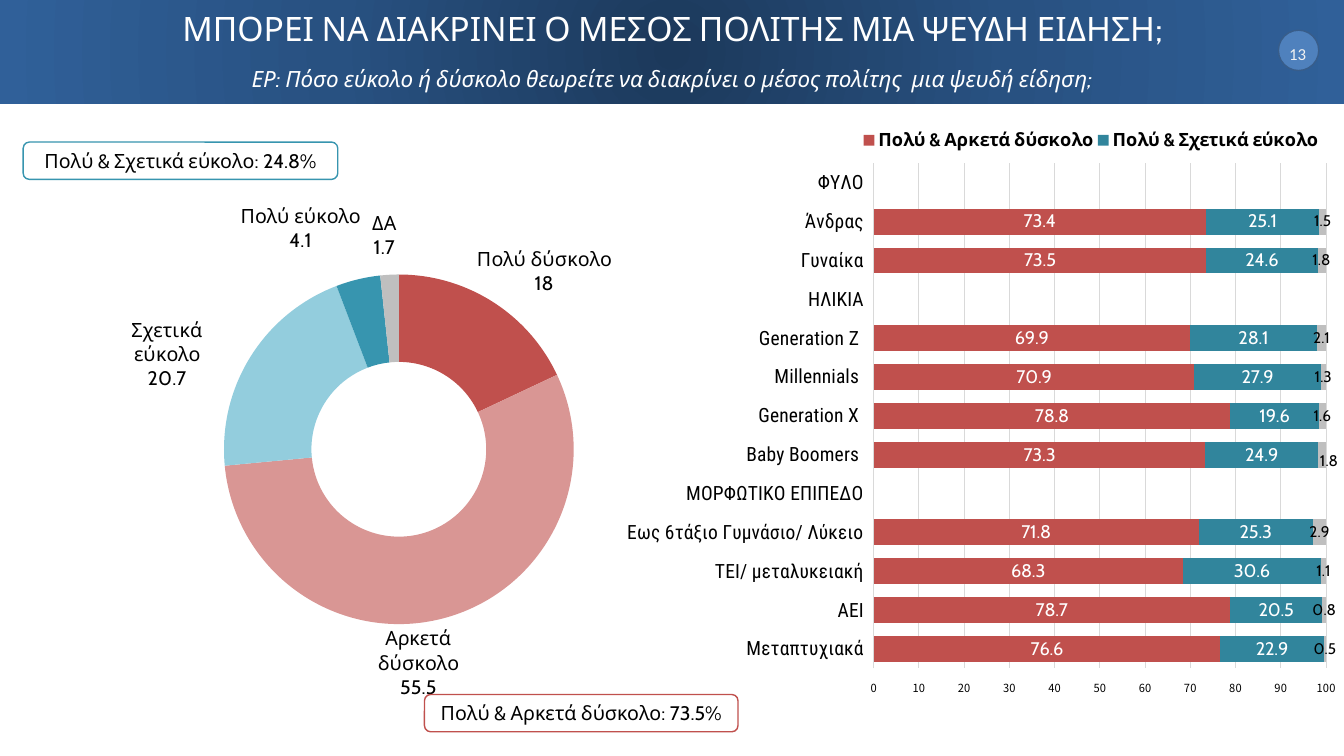
from lxml.etree import SubElement
from pptx import Presentation
from pptx.chart.data import CategoryChartData
from pptx.dml.color import RGBColor
from pptx.enum.chart import (XL_CHART_TYPE, XL_LABEL_POSITION, XL_LEGEND_POSITION,
                             XL_TICK_LABEL_POSITION, XL_TICK_MARK)
from pptx.enum.shapes import MSO_SHAPE
from pptx.enum.text import MSO_ANCHOR, PP_ALIGN
from pptx.oxml import parse_xml
from pptx.oxml.ns import nsdecls, qn
from pptx.util import Inches, Pt

COLORS = {
    "black": "000000", "white": "FFFFFF", "number": "F2F2F2", "grid": "D9D9D9",
    "navy": "1C395B", "blue": "285181", "light blue": "306099",
    "badge": "4F81BD", "badge line": "385D8A",
    "red": "C0504D", "pale red": "D99694", "teal": "3795AF",
    "pale teal": "93CDDD", "deep teal": "31859C", "gray": "BFBFBF",
}

# answer, share, colour, label shift as a fraction of the chart's size
ANSWERS = [
    ("Πολύ δύσκολο", 18, "red", (0.1, -0.13)),
    ("Αρκετά δύσκολο", 55.5, "pale red", (-0.02, 0.17)),
    ("Σχετικά εύκολο", 20.7, "pale teal", (-0.16, -0.05)),
    ("Πολύ εύκολο", 4.1, "teal", (-0.09, -0.18)),
    ("ΔΑ", 1.7, "gray", (-0.01, -0.16)),
]

GROUPS = [
    ("ΦΥΛΟ", None, None, None),
    ("Άνδρας", 73.4, 25.1, 1.5),
    ("Γυναίκα", 73.5, 24.6, 1.8),
    ("ΗΛΙΚΙΑ", None, None, None),
    ("Generation Z ", 69.9, 28.1, 2.1),
    ("Millennials ", 70.9, 27.9, 1.3),
    ("Generation X ", 78.8, 19.6, 1.6),
    ("Baby Boomers ", 73.3, 24.9, 1.8),
    ("ΜΟΡΦΩΤΙΚΟ ΕΠΙΠΕΔΟ", None, None, None),
    ("Εως 6τάξιο Γυμνάσιο/ Λύκειο", 71.8, 25.3, 2.9),
    ("ΤΕΙ/ μεταλυκειακή", 68.3, 30.6, 1.1),
    ("ΑΕΙ", 78.7, 20.5, 0.8),
    ("Μεταπτυχιακά", 76.6, 22.9, 0.5),
]

# name, bar colour, label colour, label size
OPINIONS = [
    ("Πολύ & Αρκετά δύσκολο", "red", "white", 13),
    ("Πολύ & Σχετικά εύκολο", "deep teal", "white", 13),
    ("ΔΑ", "gray", "black", 11),
]


def rgb(color):
    return RGBColor.from_string(COLORS[color])


def style_font(font, size, color="black", name="Cabin", **traits):
    font.size, font.name = Pt(size), name
    font.color.rgb = rgb(color)
    for trait, value in traits.items():
        setattr(font, trait, value)


def manual_layout(x, y, w=None, h=None, inner=False):
    """Return a c:layout; without w and h, x and y are shifts from the default place."""
    layout = parse_xml(f"<c:layout {nsdecls('c')}><c:manualLayout/></c:layout>")
    parts = [("layoutTarget", "inner")] if inner else []
    if w is not None:
        parts += [("xMode", "edge"), ("yMode", "edge")]
    parts += [("x", x), ("y", y), ("w", w), ("h", h)]
    for tag, value in parts:
        if value is not None:
            SubElement(layout[0], qn(f"c:{tag}")).set("val", str(value))
    return layout


def place_plot(chart, *box):
    area = chart._chartSpace.xpath(".//c:plotArea")[0]
    for old in area.findall(qn("c:layout")):
        area.remove(old)
    area.insert(0, manual_layout(*box, inner=True))


def shift_label(series, index, shift, size):
    """Move one point's label and return its c:dLbl."""
    style_font(series.points[index].data_label.font, size)
    label = series._element.xpath(f'.//c:dLbl[c:idx/@val="{index}"]')[0]
    label.find(qn("c:idx")).addnext(manual_layout(*shift))
    return label


class SurveySlide:
    """Holds the slide and its shared style."""

    def __init__(self, presentation):
        self.slide = presentation.slides.add_slide(presentation.slide_layouts[5])
        self.shapes = self.slide.shapes

    def shape(self, kind, box, fill=None, line=None):
        shape = self.shapes.add_shape(kind, *map(Inches, box))
        shape.shadow.inherit = False
        if fill:
            shape.fill.solid()
            shape.fill.fore_color.rgb = rgb(fill)
        if line:
            shape.line.color.rgb = rgb(line)
            shape.line.width = Pt(1)
        else:
            shape.line.fill.background()
        return shape

    def banner(self, box):
        banner = self.shape(MSO_SHAPE.RECTANGLE, box)
        stops = "".join(
            f'<a:gs pos="{pos}"><a:srgbClr val="{COLORS[color]}"/></a:gs>'
            for pos, color in ((0, "navy"), (50000, "blue"), (100000, "light blue")))
        banner._element.spPr.find(qn("a:prstGeom")).addnext(parse_xml(
            f'<a:gradFill {nsdecls("a")}><a:gsLst>{stops}</a:gsLst><a:path path="circle">'
            '<a:fillToRect l="50000" t="50000" r="50000" b="50000"/></a:path></a:gradFill>'))
        self.shapes._spTree.insert(2, banner._element)

    def title(self, box, heading, question):
        title = self.shapes.title
        title.left, title.top, title.width, title.height = map(Inches, box)
        frame = title.text_frame
        frame.vertical_anchor = MSO_ANCHOR.MIDDLE
        frame.text = f"{heading}\n{question}"
        for paragraph, size, italic in zip(frame.paragraphs, (24, 16), (False, True)):
            paragraph.alignment = PP_ALIGN.CENTER
            paragraph.line_spacing = 0.9
            style_font(paragraph.font, size, "white", italic=italic)
        frame.paragraphs[1].space_before = Pt(14)

    def centred_text(self, shape, text, size, color="black", name="Cabin"):
        frame = shape.text_frame
        frame.word_wrap = True
        frame.vertical_anchor = MSO_ANCHOR.MIDDLE
        frame.text = text
        frame.paragraphs[0].alignment = PP_ALIGN.CENTER
        style_font(frame.paragraphs[0].font, size, color, name)

    def callout(self, box, text, line):
        self.centred_text(self.shape(MSO_SHAPE.ROUNDED_RECTANGLE, box, "white", line), text, 14)

    def page_number(self, text):
        self.shape(MSO_SHAPE.OVAL, (12.68, 0.3, 0.4, 0.4), "badge", "badge line")
        number = self.shapes.add_textbox(*map(Inches, (12.41, 0.08, 0.92, 0.9)))
        self.centred_text(number, text, 12, "number", "Calibri")

    def chart(self, kind, box, categories, series, size, font):
        data = CategoryChartData()
        data.categories = categories
        for name, values in series:
            data.add_series(name, values)
        chart = self.shapes.add_chart(kind, *map(Inches, box), data).chart
        chart.has_title = chart.has_legend = False
        style_font(chart.font, size, name=font)
        return chart

    def answers_doughnut(self, box):
        names, shares, colors, shifts = zip(*ANSWERS)
        chart = self.chart(XL_CHART_TYPE.DOUGHNUT, box, names, [("Series 1", shares)], 10, "Calibri")
        place_plot(chart, 0.267, 0.169, 0.465, 0.679)
        series = chart.plots[0].series[0]
        labels = series.data_labels
        labels.show_value = labels.show_category_name = True
        style_font(labels.font, 14)
        for index, (color, shift) in enumerate(zip(colors, shifts)):
            fill = series.points[index].format.fill
            fill.solid()
            fill.fore_color.rgb = rgb(color)
            label = shift_label(series, index, shift, 14)
            label.find(qn("c:showCatName")).set("val", "1")
        for bubble_flag in series._element.xpath(".//c:dLbls//c:showBubbleSize"):
            bubble_flag.addnext(parse_xml(f"<c:separator {nsdecls('c')}>\n</c:separator>"))
        for leader_flag in series._element.xpath(".//c:showLeaderLines"):
            leader_flag.set("val", "0")

    def groups_bars(self, box):
        groups, *columns = zip(*GROUPS)
        chart = self.chart(XL_CHART_TYPE.BAR_STACKED, box, groups,
                           [(opinion[0], column) for opinion, column in zip(OPINIONS, columns)],
                           11, "Noto Sans CJK TC")
        place_plot(chart, 0.34, 0.092, 0.635, 0.807)
        plot = chart.plots[0]
        plot.gap_width, plot.overlap, plot.vary_by_categories = 50, 100, False
        for series, (_, color, label_color, size) in zip(plot.series, OPINIONS):
            series.format.fill.solid()
            series.format.fill.fore_color.rgb = rgb(color)
            series.data_labels.show_value = True
            series.data_labels.position = XL_LABEL_POSITION.CENTER
            style_font(series.data_labels.font, size, label_color)
        shift_label(plot.series[2], groups.index("Baby Boomers "), (0.01, 0.01), 11)

        people, percent = chart.category_axis, chart.value_axis
        people.reverse_order = True
        people.tick_label_position = XL_TICK_LABEL_POSITION.LOW
        style_font(people.tick_labels.font, 14, name="Roboto Condensed")
        percent.tick_label_position = XL_TICK_LABEL_POSITION.HIGH
        percent.minimum_scale, percent.maximum_scale, percent.major_unit = 0, 100, 10
        style_font(percent.tick_labels.font, 8, name="Noto Sans CJK TC")
        percent.format.line.fill.background()
        for axis in (people, percent):
            axis.major_tick_mark = axis.minor_tick_mark = XL_TICK_MARK.NONE
        for line in (people.format.line, percent.major_gridlines.format.line):
            line.color.rgb = rgb("grid")
            line.width = Pt(0.75)

        chart.has_legend = True
        chart.legend.position = XL_LEGEND_POSITION.BOTTOM
        chart.legend.include_in_layout = False
        style_font(chart.legend.font, 13, bold=True)
        place = chart.legend._element.find(qn("c:legendPos"))
        for old in chart.legend._element.findall(qn("c:layout")):
            chart.legend._element.remove(old)
        place.addnext(manual_layout(0.32, 0.03, 0.65, 0.05))
        # Legend entries of stacked bars count from the last series
        place.addnext(parse_xml(f'<c:legendEntry {nsdecls("c")}><c:idx val="0"/>'
                                '<c:delete val="1"/></c:legendEntry>'))


def main():
    presentation = Presentation()
    presentation.slide_width, presentation.slide_height = Inches(13.33), Inches(7.5)
    survey = SurveySlide(presentation)
    survey.banner((0, 0, 13.33, 1.03))
    survey.title((0.92, 0.08, 11.5, 0.88),
                 "ΜΠΟΡΕΙ ΝΑ ΔΙΑΚΡΙΝΕΙ Ο ΜΕΣΟΣ ΠΟΛΙΤΗΣ ΜΙΑ ΨΕΥΔΗ ΕΙΔΗΣΗ;",
                 "ΕΡ: Πόσο εύκολο ή δύσκολο θεωρείτε να διακρίνει ο μέσος πολίτης  μια ψευδή είδηση;")
    survey.page_number("13")
    survey.answers_doughnut((0.23, 1.86, 7.46, 5.11))
    survey.callout((0.23, 1.41, 3.12, 0.37), "Πολύ & Σχετικά εύκολο: 24.8%", "teal")
    survey.callout((4.21, 6.89, 3.11, 0.37), "Πολύ & Αρκετά δύσκολο: 73.5%", "red")
    survey.groups_bars((6.22, 1.05, 7.11, 6.21))
    presentation.save("out.pptx")


if __name__ == "__main__":
    main()
